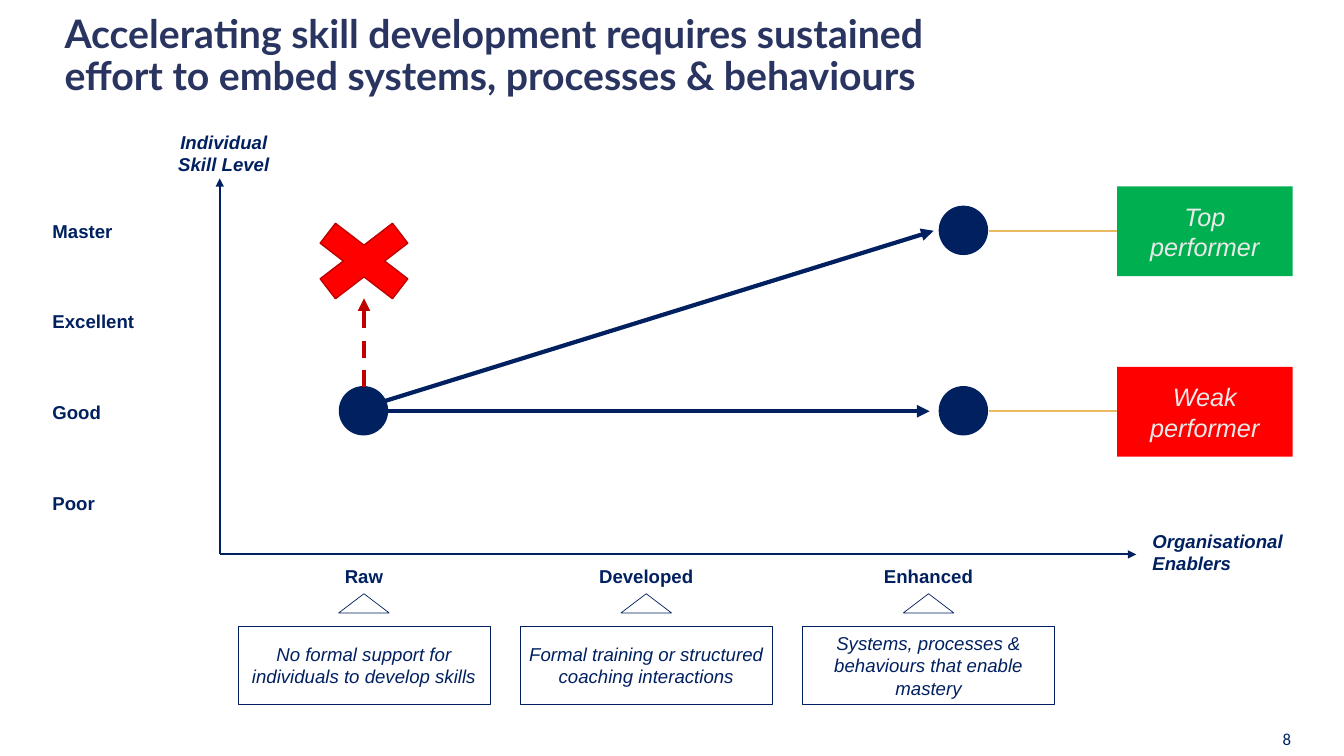
from lxml.etree import SubElement
from pptx import Presentation
from pptx.dml.color import RGBColor
from pptx.enum.dml import MSO_LINE
from pptx.enum.shapes import MSO_CONNECTOR, MSO_SHAPE
from pptx.enum.text import MSO_ANCHOR, MSO_AUTO_SIZE, PP_ALIGN
from pptx.oxml.ns import qn
from pptx.util import Inches, Pt

NAVY, RED, DARK_RED, GREEN = "002060", "FF0000", "C00000", "00B050"
GOLD, PALE, TITLE_BLUE = "EBB95F", "EAEAEA", "293460"
color = RGBColor.from_string

deck = Presentation()
deck.slide_width, deck.slide_height = Inches(13.33), Inches(7.5)
page = deck.slides.add_slide(deck.slide_layouts[5])


def add_item(place, text="", kind=None, fill=None, line=None, width=0.5, size=13.3,
             ink=NAVY, bold=False, italic=False, align=PP_ALIGN.CENTER,
             anchor=MSO_ANCHOR.MIDDLE, font="Arial"):
    """Add a preset shape, or a text box when no kind is given."""
    place = [Inches(length) for length in place]
    if kind is None:
        box = page.shapes.add_textbox(*place)
    else:
        box = page.shapes.add_shape(kind, *place)
        box.shadow.inherit = False
        if fill:
            box.fill.solid()
            box.fill.fore_color.rgb = color(fill)
        else:
            box.fill.background()
        if line:
            box.line.color.rgb = color(line)
            box.line.width = Pt(width)
        else:
            box.line.fill.background()
    if text:
        frame = box.text_frame
        frame.word_wrap = True
        frame.vertical_anchor = anchor
        margin = Inches(0.08 if kind else 0)
        frame.margin_left = frame.margin_right = margin
        frame.margin_top = frame.margin_bottom = margin
        para = frame.paragraphs[0]
        para.text = text
        para.alignment = align
        para.font.name, para.font.size = font, Pt(size)
        para.font.bold, para.font.italic = bold, italic
        para.font.color.rgb = color(ink)


def add_line(start, end, ink=NAVY, width=1.5, arrow=True, dashed=False):
    """Add a straight line, with an arrowhead at its end unless told otherwise."""
    ends = [Inches(length) for length in (*start, *end)]
    line = page.shapes.add_connector(MSO_CONNECTOR.STRAIGHT, *ends)
    line.line.color.rgb = color(ink)
    line.line.width = Pt(width)
    if dashed:
        line.line.dash_style = MSO_LINE.DASH
    if arrow:
        SubElement(line.line._get_or_add_ln(), qn("a:tailEnd"), type="triangle")
    SubElement(line._element.spPr, qn("a:effectLst"))


# Title
title = page.shapes.title
title.left, title.top = Inches(0.64), Inches(0.14)
title.width, title.height = Inches(9.42), Inches(0.85)
frame = title.text_frame
frame.word_wrap, frame.auto_size = True, MSO_AUTO_SIZE.NONE
frame.vertical_anchor = MSO_ANCHOR.TOP
frame.margin_left = frame.margin_right = frame.margin_top = frame.margin_bottom = 0
para = frame.paragraphs[0]
para.text = ("Accelerating skill development requires sustained effort "
             "to embed systems, processes & behaviours")
para.alignment, para.line_spacing = PP_ALIGN.LEFT, 0.9
para.font.name, para.font.size, para.font.bold = "Lato", Pt(28), True
para.font.color.rgb = color(TITLE_BLUE)

# Axes and their names
origin = (2.18, 5.5)
add_line(origin, (11.27, 5.5))
add_line(origin, (2.18, 1.77))
add_item((1.47, 1.29, 1.5, 0.45), "Individual\vSkill Level", bold=True, italic=True)
add_item((11.43, 5.25, 1.5, 0.45), "Organisational\vEnablers", bold=True, italic=True,
         align=PP_ALIGN.LEFT)

# Skill levels
first_level, level_step = 2.29, 0.9
for index, level in enumerate(["Master", "Excellent", "Good", "Poor"]):
    middle = first_level + index * level_step
    add_item((0.52, middle - 0.11, 1.54, 0.22), level, bold=True, align=PP_ALIGN.LEFT)

# Enabler stages, each with a pointer and an explanation
first_stage, stage_step = 3.61, 2.8
stages = [
    ("Raw", "No formal support for individuals to develop skills"),
    ("Developed", "Formal training or structured coaching interactions"),
    ("Enhanced", "Systems, processes & behaviours that enable mastery"),
]
for index, (stage, meaning) in enumerate(stages):
    middle = first_stage + index * stage_step
    add_item((middle - 0.75, 5.6, 1.5, 0.22), stage, bold=True)
    add_item((middle - 0.25, 5.89, 0.5, 0.19), kind=MSO_SHAPE.ISOSCELES_TRIANGLE, line=NAVY)
    add_item((middle - 1.25, 6.21, 2.5, 0.78), meaning, MSO_SHAPE.RECTANGLE,
             line=NAVY, italic=True)

# Paths from the starting point
master, good = 2.29, 4.08
start_x, finish_x = 3.61, 9.56
add_line((3.49, good), (9.26, master), width=3)
add_line((3.49, good), (9.22, good), width=3)
for x, y in [(start_x, good), (finish_x, good), (finish_x, master)]:
    add_item((x - 0.25, y - 0.25, 0.49, 0.49), kind=MSO_SHAPE.OVAL, fill=NAVY)

# Outcomes
for label, y, fill in [("Top\vperformer", master, GREEN), ("Weak\vperformer", good, RED)]:
    add_item((11.08, y - 0.44, 1.74, 0.89), label, MSO_SHAPE.RECTANGLE,
             fill=fill, size=18, ink=PALE, italic=True)
    add_line((9.81, y), (11.08, y), GOLD, arrow=False)

# Blocked path
add_item((2.92, 2.06, 1.38, 1.06), kind=MSO_SHAPE.MATH_MULTIPLY, fill=RED,
         line=DARK_RED, width=1)
add_line((start_x, 3.84), (start_x, 2.96), DARK_RED, width=3, dashed=True)

# Page number
add_item((12.72, 7.23, 0.18, 0.2), "8", size=12, align=PP_ALIGN.LEFT,
         anchor=MSO_ANCHOR.TOP, font="Calibri")

deck.save("out.pptx")
